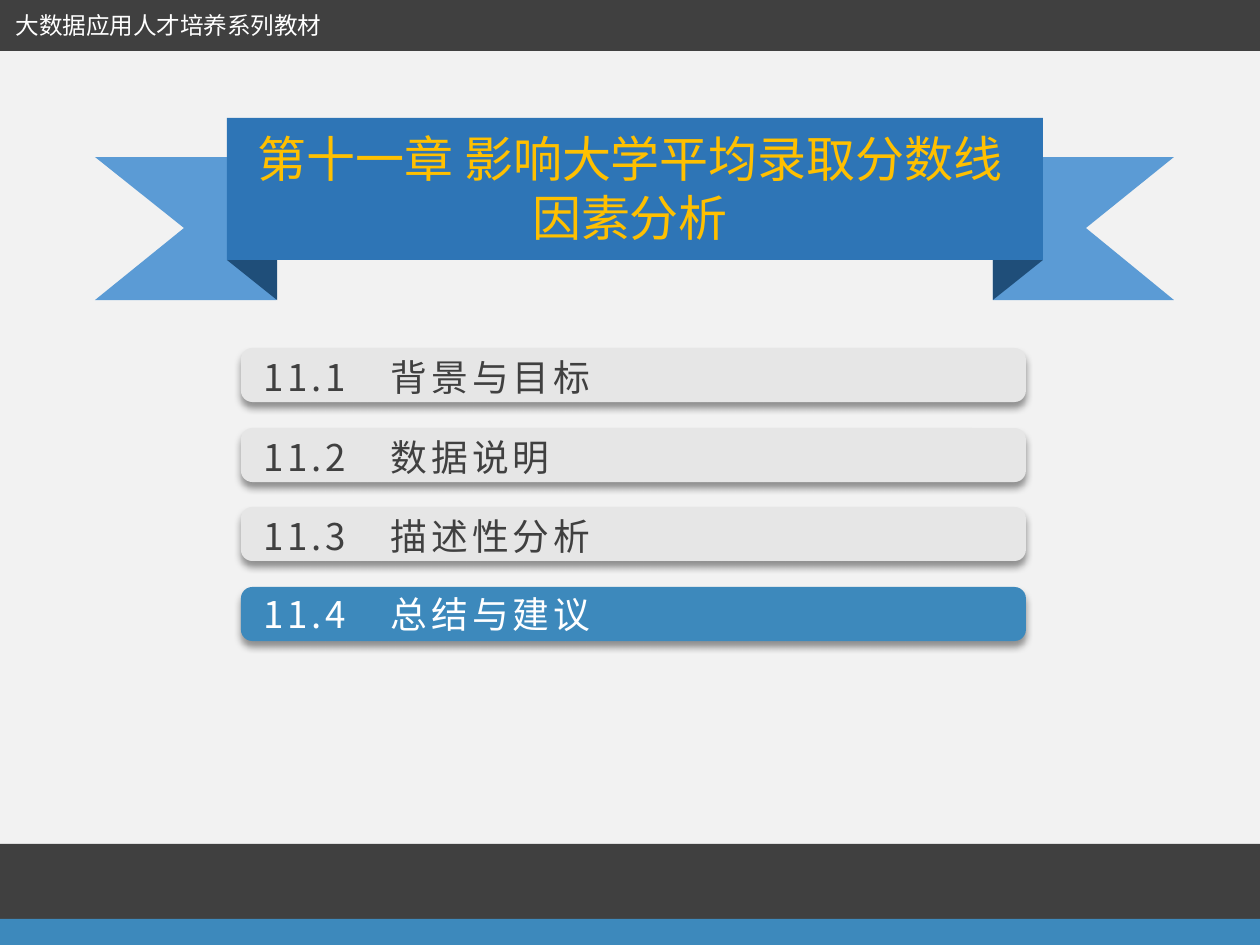
import pptx
import pptx.util
import pptx.dml.color
import pptx.enum.shapes
import pptx.enum.text
import pptx.oxml
import pptx.oxml.ns

PX = 914400 // 126
FONT = "Noto Sans CJK SC"
DARK = "404040"
BLUE = "3D89BC"
LIGHT = "E6E6E6"
WHITE = "FFFFFF"
TAIL = "5B9BD5"
FOLD = "1F4E79"
SHAPES = pptx.enum.shapes.MSO_SHAPE
ALIGN = pptx.enum.text.PP_ALIGN
SHADOW = (
    '<a:effectLst %s><a:outerShdw blurRad="50800" dist="38100" dir="5400000" '
    'algn="t" rotWithShape="0"><a:srgbClr val="000000"><a:alpha val="40000"/>'
    "</a:srgbClr></a:outerShdw></a:effectLst>" % pptx.oxml.ns.nsdecls("a")
)


def rgb(color):
    return pptx.dml.color.RGBColor.from_string(color)


def paint(sp, color):
    sp.shadow.inherit = False
    sp.fill.solid()
    sp.fill.fore_color.rgb = rgb(color)
    sp.line.fill.background()


def add_shape(s, kind, box, color, rotation=0):
    sp = s.shapes.add_shape(kind, *(v * PX for v in box))
    sp.rotation = rotation
    paint(sp, color)
    return sp


def add_outline(s, points, color):
    builder = s.shapes.build_freeform(*points[0], scale=PX)
    builder.add_line_segments(points[1:], close=True)
    paint(builder.convert_to_shape(), color)


def add_text(s, text, box, size, color, align=ALIGN.LEFT, wrap=False, spacing=0):
    tf = s.shapes.add_textbox(*(v * PX for v in box)).text_frame
    tf.word_wrap = wrap
    p = tf.paragraphs[0]
    p.alignment = align
    r = p.add_run()
    r.text = text
    r.font.size = pptx.util.Pt(size)
    r.font.name = FONT
    r.font.color.rgb = rgb(color)
    rPr = r.font._element
    if spacing:
        rPr.set("spc", str(spacing))
    ea = pptx.oxml.parse_xml("<a:ea %s/>" % pptx.oxml.ns.nsdecls("a"))
    ea.set("typeface", FONT)
    rPr.append(ea)


def add_banner(s, title):
    for outer, inner, notch in ((95, 276, 184), (1174, 993, 1086)):
        points = [(outer, 157), (inner, 157), (inner, 300), (outer, 300), (notch, 228)]
        add_outline(s, points, TAIL)
    add_shape(s, SHAPES.RIGHT_TRIANGLE, (227, 260, 50, 40), FOLD, 180)
    add_shape(s, SHAPES.RIGHT_TRIANGLE, (998, 255, 40, 50), FOLD, 90)
    add_shape(s, SHAPES.RECTANGLE, (227, 118, 816, 142), "2E75B6")
    add_text(s, title, (227, 122, 806, 131), 28, "FFC000", ALIGN.CENTER, wrap=True)


def add_entry(s, text, bar_top, text_top, fill, color):
    sp = add_shape(s, SHAPES.ROUNDED_RECTANGLE, (241, bar_top, 785, 54), fill)
    sp.adjustments[0] = 0.21
    spPr = sp._element.spPr
    spPr.remove(spPr.find(pptx.oxml.ns.qn("a:effectLst")))
    spPr.append(pptx.oxml.parse_xml(SHADOW))
    add_text(s, text, (251, text_top, 363, 57), 21, color, spacing=220)


def main():
    prs = pptx.Presentation()
    prs.slide_width = 1260 * PX
    prs.slide_height = 945 * PX
    s = prs.slides.add_slide(prs.slide_layouts[6])
    s.background.fill.solid()
    s.background.fill.fore_color.rgb = rgb("F2F2F2")

    add_banner(s, "第十一章 影响大学平均录取分数线因素分析")

    add_shape(s, SHAPES.RECTANGLE, (-1, -1, 1262, 52), DARK)
    add_shape(s, SHAPES.RECTANGLE, (0, 844, 1260, 76), DARK)
    add_shape(s, SHAPES.RECTANGLE, (0, 919, 1260, 26), BLUE)
    add_text(s, "大数据应用人才培养系列教材", (1, 5, 335, 42), 13.5, WHITE, ALIGN.CENTER)

    for i, text in enumerate(("11.1 背景与目标", "11.2 数据说明", "11.3 描述性分析")):
        top = 348 + round(79.5 * i)
        add_entry(s, text.replace(" ", "　"), top, top + 1, LIGHT, DARK)
    add_entry(s, "11.4　总结与建议", 587, 586, BLUE, WHITE)

    prs.save("out.pptx")


if __name__ == "__main__":
    main()
